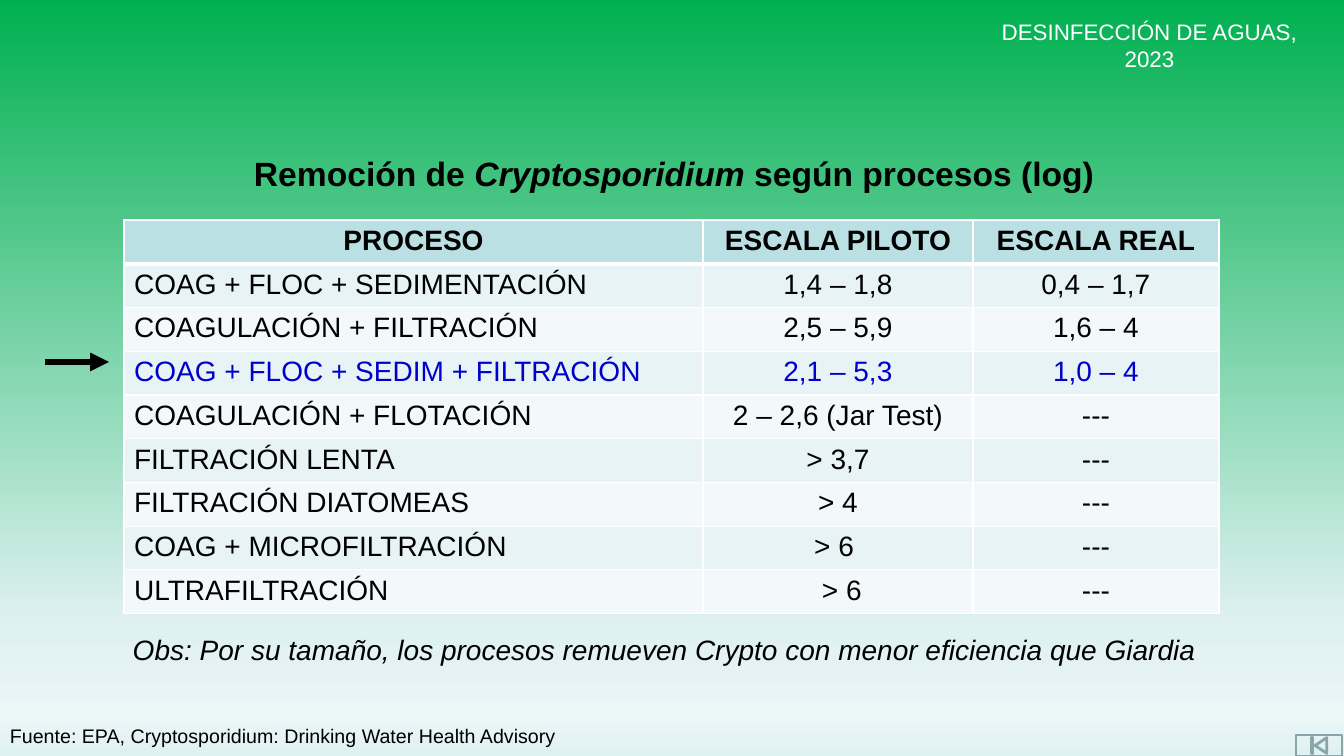
from lxml import etree
from pptx import Presentation
from pptx import util as u
from pptx.dml.color import RGBColor
from pptx.enum import shapes, text
from pptx.oxml.ns import qn

SCALE = 12192000 / 1344
FONT = "Arial"
BLACK, WHITE, BLUE = "000000", "FFFFFF", "0000CC"
HEADER_FILL, BAND_FILLS = "BBE0E3", ("E7F3F4", "F3F9FA")
STOPS = [(0, "00B050"), (83, "E0F1F2"), (95, "EBF6F7"), (100, "E0F1F2")]
COLUMNS = (579, 270, 246)
HIGHLIGHT = 3
ROWS = [
    ("PROCESO", "ESCALA PILOTO", "ESCALA REAL"),
    ("COAG + FLOC + SEDIMENTACIÓN", "1,4 – 1,8", "0,4 – 1,7"),
    ("COAGULACIÓN + FILTRACIÓN", "2,5 – 5,9", "1,6 – 4"),
    ("COAG + FLOC + SEDIM + FILTRACIÓN", "2,1 – 5,3", "1,0 – 4"),
    ("COAGULACIÓN + FLOTACIÓN", "2 – 2,6 (Jar Test)", "---"),
    ("FILTRACIÓN LENTA", "> 3,7", "---"),
    ("FILTRACIÓN DIATOMEAS", "> 4", "---"),
    ("COAG + MICROFILTRACIÓN", "> 6 ", "---"),
    ("ULTRAFILTRACIÓN", " > 6", "---"),
]


def px(n):
    """Turn px into EMU."""
    return u.Emu(round(n * SCALE))


def rgb(value):
    """Turn a hex string into a colour."""
    return RGBColor.from_string(value)


def add_solid(parent, color):
    """Append a solid fill to an XML element."""
    fill = etree.SubElement(parent, qn("a:solidFill"))
    etree.SubElement(fill, qn("a:srgbClr"), val=color)


def set_background(s):
    """Give the slide its vertical gradient."""
    fill = s.background.fill
    fill.gradient()
    fill.gradient_angle = 270
    stops = next(s.element.iter(qn("a:gsLst")))
    for stop in list(stops):
        stops.remove(stop)
    for pos, color in STOPS:
        stop = etree.SubElement(stops, qn("a:gs"), pos=str(pos * 1000))
        etree.SubElement(stop, qn("a:srgbClr"), val=color)


def style(p, size, color=BLACK, bold=False, italic=None, center=True):
    """Set the font and alignment of a paragraph."""
    p.font.name, p.font.size = FONT, u.Pt(size)
    p.font.bold, p.font.italic = bold, italic
    p.font.color.rgb = rgb(color)
    p.alignment = text.PP_ALIGN.CENTER if center else text.PP_ALIGN.LEFT


def add_text(s, box, runs, size, **look):
    """Add a wrapped text box of (wording, italic) runs."""
    tf = s.shapes.add_textbox(*map(px, box)).text_frame
    tf.word_wrap = True
    tf.auto_size = text.MSO_AUTO_SIZE.SHAPE_TO_FIT_TEXT
    p = tf.paragraphs[0]
    style(p, size, **look)
    for wording, italic in runs:
        r = p.add_run()
        r.text = wording
        if italic:
            r.font.italic = True


def set_borders(cell, bottom):
    """Draw white borders round a cell."""
    tc_pr = cell._tc.get_or_add_tcPr()
    for i, (side, width) in enumerate(zip("LRTB", (1, 1, 1, bottom))):
        line = etree.Element(qn("a:ln" + side), w=str(u.Pt(width)))
        add_solid(line, WHITE)
        tc_pr.insert(i, line)


def add_process_table(s):
    """Add the table of removal by process."""
    box = (124, 220, sum(COLUMNS), 41 * len(ROWS))
    table = s.shapes.add_table(len(ROWS), len(COLUMNS), *map(px, box)).table
    for column, width in zip(table.columns, COLUMNS):
        column.width = px(width)
    for i, values in enumerate(ROWS):
        table.rows[i].height = px(41)
        header = i == 0
        fill = HEADER_FILL if header else BAND_FILLS[(i - 1) % 2]
        color = BLUE if i == HIGHLIGHT else BLACK
        for j, value in enumerate(values):
            cell = table.cell(i, j)
            cell.text = value
            cell.fill.solid()
            cell.fill.fore_color.rgb = rgb(fill)
            style(cell.text_frame.paragraphs[0], 20, color, header, center=header or j > 0)
            set_borders(cell, 3 if i == 0 else 1)


def add_arrow(s, x1, y1, x2, y2):
    """Add a thick black arrow."""
    sp = s.shapes.add_connector(shapes.MSO_CONNECTOR.STRAIGHT, *map(px, (x1, y1, x2, y2)))
    sp.line.width = u.Pt(4.5)
    sp.line.color.rgb = rgb(BLACK)
    etree.SubElement(sp.line._get_or_add_ln(), qn("a:tailEnd"), type="triangle")
    etree.SubElement(sp._element.spPr, qn("a:effectLst"))


def add_button(s, box):
    """Add the outlined return button."""
    sp = s.shapes.add_shape(shapes.MSO_SHAPE.ACTION_BUTTON_BEGINNING, *map(px, box))
    sp.shadow.inherit = False
    sp.fill.background()
    sp.line.color.rgb = rgb("8AA6A8")
    sp.line.width = u.Pt(2)


def main():
    """Build and save the slide."""
    prs = Presentation()
    prs.slide_width, prs.slide_height = px(1344), px(756)
    s = prs.slides.add_slide(prs.slide_layouts[6])
    set_background(s)
    add_button(s, (1296, 735, 46, 21))
    add_text(s, (990, 13, 319, 37), [("DESINFECCIÓN DE AGUAS, 2023", False)], 16, color=WHITE)
    add_process_table(s)
    add_text(s, (0, 719, 672, 34),
             [("Fuente: EPA, Cryptosporidium: Drinking Water Health Advisory", False)],
             14, center=False)
    add_text(s, (126, 148, 1096, 50),
             [("Remoción de ", False), ("Cryptosporidium", True), (" según procesos (log)", False)],
             24, bold=True)
    add_arrow(s, 45, 362, 109, 362)
    add_text(s, (109, 628, 1111, 44),
             [("Obs: Por su tamaño, los procesos remueven Crypto con menor eficiencia que Giardia", False)],
             20, italic=True)
    prs.save("out.pptx")


if __name__ == "__main__":
    main()
